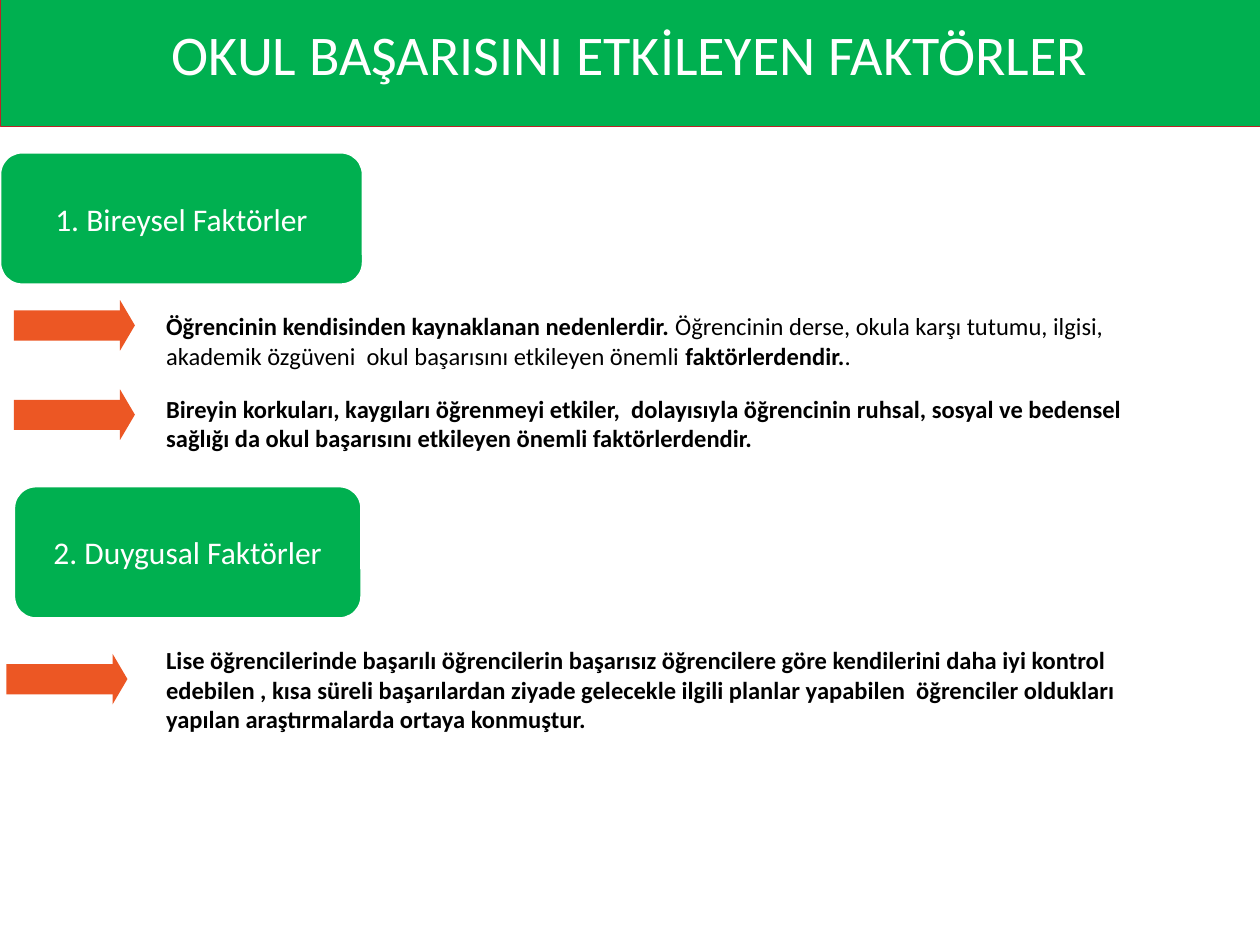
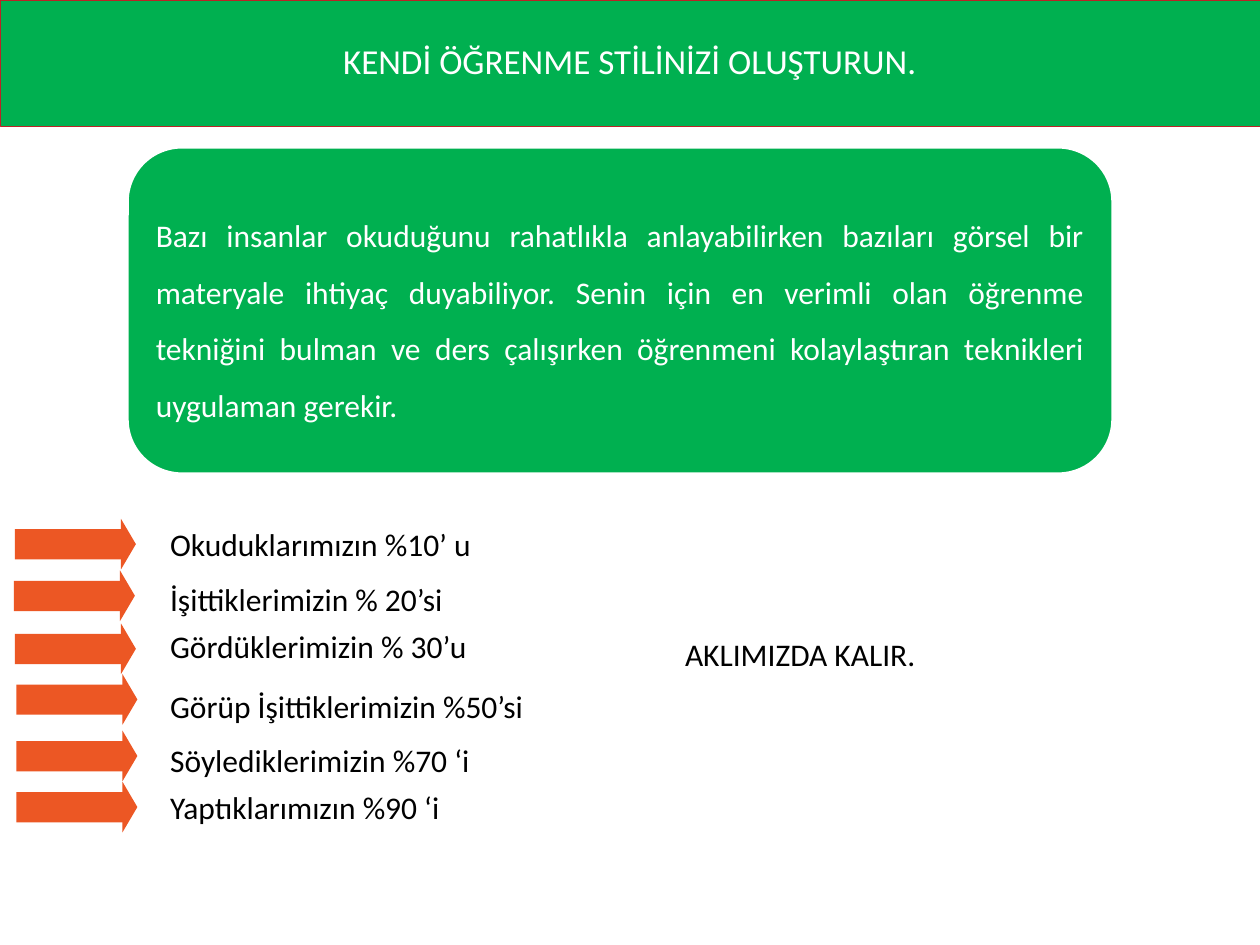
from pptx import Presentation
from pptx.dml.color import RGBColor
from pptx.enum.shapes import MSO_SHAPE
from pptx.enum.text import MSO_ANCHOR, MSO_AUTO_SIZE, PP_ALIGN
from pptx.util import Cm, Pt

COLORS = {
    "green": "00B050",
    "orange": "EC5724",
    "red": "BB2326",
    "white": "FFFFFF",
    "black": "000000",
}
FONT = "Calibri"


class Deck:
    def __init__(self):
        self.prs = Presentation()
        self.prs.slide_width = Cm(25.4)
        self.prs.slide_height = Cm(19.05)
        self.slide = None

    def color(self, name):
        return RGBColor.from_string(COLORS[name])

    def paint(self, shape, fill, line=None, width=0):
        shape.fill.solid()
        shape.fill.fore_color.rgb = self.color(fill)
        if line:
            shape.line.color.rgb = self.color(line)
            shape.line.width = Pt(width)
        else:
            shape.line.fill.background()

    def label(self, shape, runs, size, color, align=PP_ALIGN.LEFT, space=1.0,
              anchor=MSO_ANCHOR.MIDDLE, bold=False):
        frame = shape.text_frame
        frame.word_wrap = True
        frame.auto_size = MSO_AUTO_SIZE.NONE
        frame.vertical_anchor = anchor
        para = frame.paragraphs[0]
        para.alignment = align
        para.line_spacing = space
        font = para.font
        font.name, font.size, font.bold = FONT, Pt(size), bold
        font.color.rgb = self.color(color)
        if isinstance(runs, str):
            para.add_run().text = runs
            return
        for text, heavy in runs:
            run = para.add_run()
            run.text = text
            run.font.bold = heavy

    def page(self, title, size, top=0.0):
        self.slide = self.prs.slides.add_slide(self.prs.slide_layouts[5])
        band = self.slide.shapes.title
        band.left, band.top = Cm(0), Cm(top)
        band.width, band.height = Cm(25.4), Cm(2.54 - top)
        self.paint(band, "green", "red", 0.5)
        self.label(band, title, size, "white", PP_ALIGN.CENTER, 0.9)

    def card(self, text, left, top, width, height,
             align=PP_ALIGN.CENTER, space=1.0):
        card = self.slide.shapes.add_shape(
            MSO_SHAPE.ROUNDED_RECTANGLE,
            Cm(left), Cm(top), Cm(width), Cm(height))
        card.shadow.inherit = False
        self.paint(card, "green", "white", 1.5)
        self.label(card, text, 18, "white", align, space)

    def arrow(self, left, top):
        group = self.slide.shapes.add_group_shape().shapes
        shaft = group.add_shape(MSO_SHAPE.RECTANGLE, Cm(left),
                                Cm(top + 0.21), Cm(2.21), Cm(0.61))
        base, tip = Cm(left + 2.14), Cm(left + 2.44)
        head = group.build_freeform(base, Cm(top))
        head.add_line_segments(
            [(tip, Cm(top + 0.51)), (base, Cm(top + 1.02))], close=True)
        for part in (shaft, head.convert_to_shape()):
            part.shadow.inherit = False
            self.paint(part, "orange")

    def note(self, runs, left, top, width, height, size=18, bold=False):
        box = self.slide.shapes.add_textbox(
            Cm(left), Cm(top), Cm(width), Cm(height))
        self.label(box, runs, size, "black", anchor=MSO_ANCHOR.TOP, bold=bold)


def factors(deck):
    deck.page("OKUL BAŞARISINI ETKİLEYEN FAKTÖRLER", 32, -0.23)
    deck.card("1. Bireysel Faktörler", 0, 3.07, 7.32, 2.67)
    deck.card("2. Duygusal Faktörler", 0.28, 9.8, 7.01, 2.67)
    own = [
        ("Öğrencinin kendisinden kaynaklanan nedenlerdir. ", True),
        ("Öğrencinin derse, okula karşı tutumu, ilgisi, akademik özgüveni  "
         "okul başarısını etkileyen önemli ", False),
        ("faktörlerdendir.", True),
        (".", False),
    ]
    fears = ("Bireyin korkuları, kaygıları öğrenmeyi etkiler,  dolayısıyla "
             "öğrencinin ruhsal, sosyal ve bedensel sağlığı da okul "
             "başarısını etkileyen önemli faktörlerdendir.")
    plans = ("Lise öğrencilerinde başarılı öğrencilerin başarısız öğrencilere "
             "göre kendilerini daha iyi kontrol edebilen , kısa süreli "
             "başarılardan ziyade gelecekle ilgili planlar yapabilen  "
             "öğrenciler oldukları yapılan araştırmalarda ortaya konmuştur.")
    for runs, left, tip, top, width, height in (
        (own, 0.28, 6.05, 6.15, 20.4, 1.45),
        (fears, 0.28, 7.85, 7.82, 20.68, 1.45),
        (plans, 0.13, 13.18, 12.88, 20.4, 2.06),
    ):
        deck.arrow(left, tip)
        deck.note(runs, 3.1, top, width, height, 14, True)


def styles(deck):
    deck.page("KENDİ ÖĞRENME STİLİNİZİ OLUŞTURUN.", 20)
    deck.card("Bazı insanlar okuduğunu rahatlıkla anlayabilirken bazıları "
              "görsel bir materyale ihtiyaç duyabiliyor. Senin için en "
              "verimli olan öğrenme tekniğini bulman ve "
              "ders çalışırken öğrenmeni kolaylaştıran teknikleri "
              "uygulaman gerekir.",
              2.57, 2.97, 19.86, 6.58, PP_ALIGN.JUSTIFY, 1.5)
    for text, left, tip, top in (
        ("Okuduklarımızın %10’ u", 0.3, 10.46, 10.46),
        ("İşittiklerimizin % 20’si", 0.28, 11.5, 11.56),
        ("Gördüklerimizin % 30’u", 0.3, 12.57, 12.52),
        ("Görüp İşittiklerimizin %50’si", 0.33, 13.59, 13.72),
        ("Söylediklerimizin %70 ‘i", 0.33, 14.73, 14.81),
        ("Yaptıklarımızın %90 ‘i", 0.33, 15.76, 15.77),
    ):
        deck.arrow(left, tip)
        deck.note(text, 3.18, top, 8.31, 1.02)
    deck.note("AKLIMIZDA KALIR.", 13.56, 12.67, 8.31, 1.02)


def main():
    deck = Deck()
    factors(deck)
    styles(deck)
    deck.prs.save("out.pptx")


if __name__ == "__main__":
    main()
